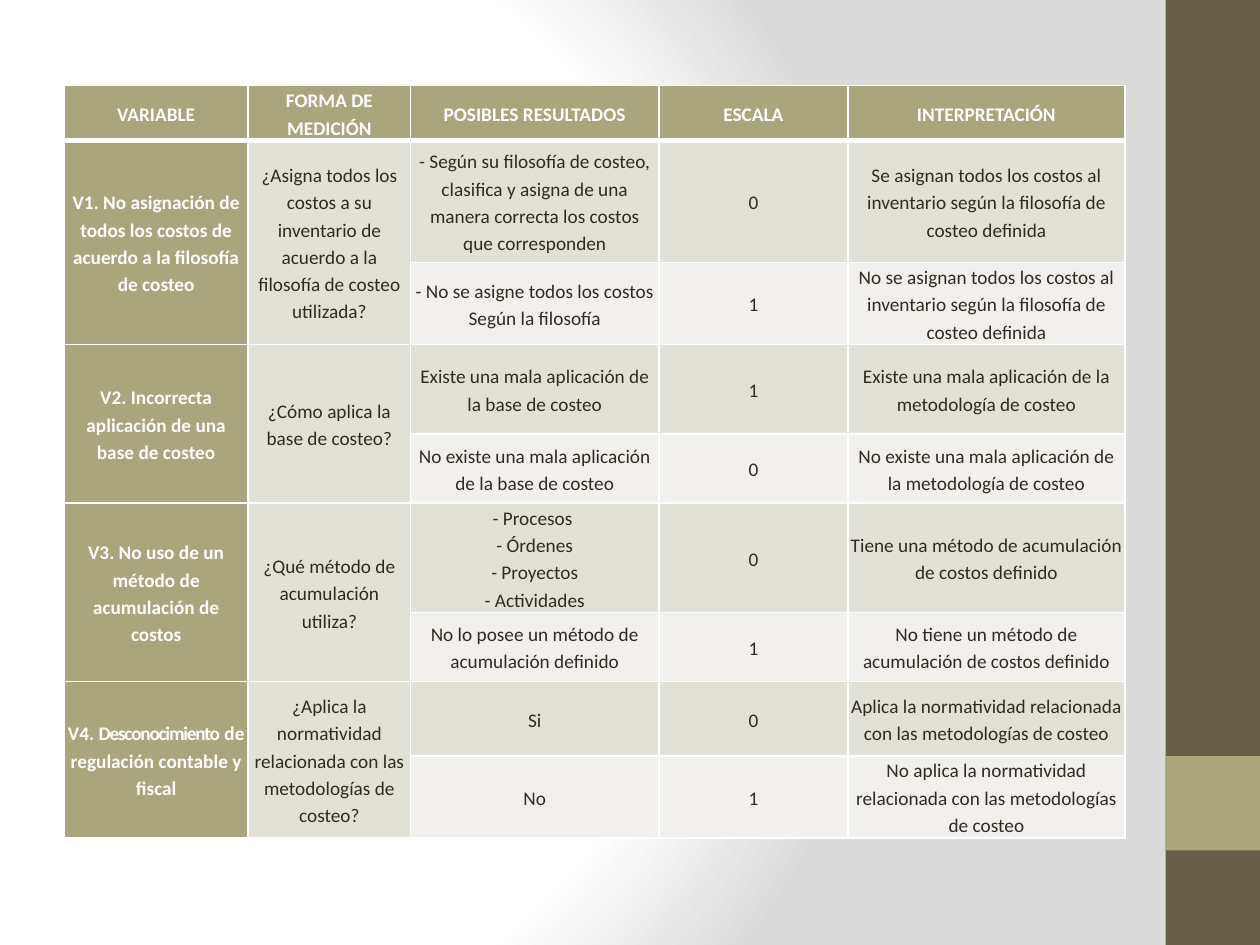
"""Build a slide with a table of costing variables, measures and scales."""
from lxml.etree import SubElement
from pptx import Presentation
from pptx.dml.color import RGBColor
from pptx.enum.shapes import MSO_SHAPE
from pptx.enum.text import MSO_ANCHOR, PP_ALIGN
from pptx.oxml import parse_xml
from pptx.oxml.ns import nsdecls, qn
from pptx.util import Inches, Pt

COLORS = {"white": "FFFFFF", "shade": "DADADA", "brown": "675E47", "olive": "A9A57C",
          "band": "E2E1D7", "light": "F1F0EC", "ink": "2F2B20"}
HEADERS = ["VARIABLE", "FORMA DE MEDICIÓN", "POSIBLES RESULTADOS", "ESCALA", "INTERPRETACIÓN"]
VARIABLES = [
    ("V1. No asignación de todos los costos de acuerdo a la filosofía de costeo",
     "¿Asigna todos los costos a su inventario de acuerdo a la filosofía de costeo utilizada?",
     [("- Según su filosofía de costeo, clasifica y asigna de una manera correcta "
       "los costos que corresponden", "0",
       "Se asignan todos los costos al inventario según la filosofía de costeo definida"),
      ("- No se asigne todos los costos Según la filosofía", "1",
       "No se asignan todos los costos al inventario según la filosofía de costeo definida")]),
    ("V2. Incorrecta aplicación de una base de costeo",
     "¿Cómo aplica la base de costeo?",
     [("Existe una mala aplicación de la base de costeo", "1",
       "Existe una mala aplicación de la metodología de costeo"),
      ("No existe una mala aplicación de la base de costeo", "0",
       "No existe una mala aplicación de la metodología de costeo")]),
    ("V3. No uso de un método de acumulación de costos",
     "¿Qué método de acumulación utiliza?",
     [("- Procesos \n- Órdenes\n- Proyectos\n- Actividades", "0",
       "Tiene una método de acumulación de costos definido"),
      ("No lo posee un método de acumulación definido", "1",
       "No tiene un método de acumulación de costos definido")]),
    (("V4. ", "Desconocimiento", " de regulación contable y fiscal"),
     "¿Aplica la normatividad relacionada con las metodologías de costeo?",
     [("Si", "0", "Aplica la normatividad relacionada con las metodologías de costeo"),
      ("No", "1", "No aplica la normatividad relacionada con las metodologías de costeo")]),
]
CONDENSED = {"Desconocimiento": "-70"}
COLUMN_WIDTHS = [1.46, 1.29, 1.97, 1.5, 2.2]
ROW_HEIGHTS = [0.28, 0.97, 0.55, 0.71, 0.55, 0.67, 0.55, 0.59, 0.59]
SIDEBAR = [(0, 7.5, "brown"), (6, 0.75, "olive")]
CELL_FORMAT = {"vertical_anchor": MSO_ANCHOR.MIDDLE, "margin_left": Inches(0.02),
               "margin_right": Inches(0.02), "margin_top": 0, "margin_bottom": 0}
PARAGRAPH_FORMAT = {"alignment": PP_ALIGN.CENTER, "line_spacing": 1.15}


def apply(target, values):
    for name, value in values.items():
        setattr(target, name, value)


def paint(target, color):
    target.fill.solid()
    target.fill.fore_color.rgb = RGBColor.from_string(COLORS[color])


def set_background(slide):
    stops = "".join(f'<a:gs pos="{position}000"><a:srgbClr val="{COLORS[color]}"/></a:gs>'
                    for position, color in [(0, "white"), (75, "white"), (100, "shade")])
    slide._element.cSld.insert(0, parse_xml(
        f'<p:bg {nsdecls("p", "a")}><p:bgPr><a:gradFill rotWithShape="1"><a:gsLst>{stops}</a:gsLst>'
        '<a:path path="circle"><a:fillToRect l="20000" t="50000" r="100000" b="50000"/></a:path>'
        '</a:gradFill><a:effectLst/></p:bgPr></p:bg>'))


def add_borders(cell, widths):
    properties = cell._tc.get_or_add_tcPr()
    for index, (side, width) in enumerate(widths.items()):
        line = SubElement(properties, qn(f"a:ln{side}"), w=str(Pt(width)))
        SubElement(SubElement(line, qn("a:solidFill")), qn("a:srgbClr"), val=COLORS["white"])
        properties.insert(index, line)


def fill_cell(cell, content, fill, color, bold, bottom=1):
    apply(cell, CELL_FORMAT)
    paint(cell, fill)
    add_borders(cell, {"L": 1, "R": 1, "T": 1, "B": bottom})
    lines = [content] if isinstance(content, tuple) else [(text,) for text in content.split("\n")]
    for index, texts in enumerate(lines):
        para = cell.text_frame.add_paragraph() if index else cell.text_frame.paragraphs[0]
        apply(para, PARAGRAPH_FORMAT)
        for text in texts:
            span = para.add_run()
            span.text = text
            apply(span.font, {"name": "Calibri", "size": Pt(11), "bold": bold})
            span.font.color.rgb = RGBColor.from_string(COLORS[color])
            if text in CONDENSED:
                span.font._element.set("spc", CONDENSED[text])


def add_variables_table(slide):
    frame = slide.shapes.add_table(len(ROW_HEIGHTS), len(COLUMN_WIDTHS), Inches(0.51),
                                   Inches(0.68), Inches(8.43), Inches(5.85))
    table = frame.table
    for column, width in zip(table.columns, COLUMN_WIDTHS):
        column.width = Inches(width)
    for row, height in zip(table.rows, ROW_HEIGHTS):
        row.height = Inches(height)
    frame.height = Inches(5.85)
    for column, header in enumerate(HEADERS):
        fill_cell(table.cell(0, column), header, "olive", "white", True, bottom=3)
    for index, (variable, question, outcomes) in enumerate(VARIABLES):
        top = 1 + 2 * index
        for column in (0, 1):
            table.cell(top, column).merge(table.cell(top + 1, column))
        fill_cell(table.cell(top, 0), variable, "olive", "white", True)
        fill_cell(table.cell(top, 1), question, "band", "ink", False)
        for offset, (outcome, fill) in enumerate(zip(outcomes, ("band", "light"))):
            for column, text in enumerate(outcome, 2):
                fill_cell(table.cell(top + offset, column), text, fill, "ink", False)


def main():
    deck = Presentation()
    apply(deck, {"slide_width": Inches(10), "slide_height": Inches(7.5)})
    slide = deck.slides.add_slide(deck.slide_layouts[6])
    set_background(slide)
    for top, height, color in SIDEBAR:
        bar = slide.shapes.add_shape(MSO_SHAPE.RECTANGLE, Inches(9.25), Inches(top),
                                     Inches(0.75), Inches(height))
        bar.shadow.inherit = False
        bar.line.fill.background()
        paint(bar, color)
    add_variables_table(slide)
    deck.save("out.pptx")


if __name__ == "__main__":
    main()
